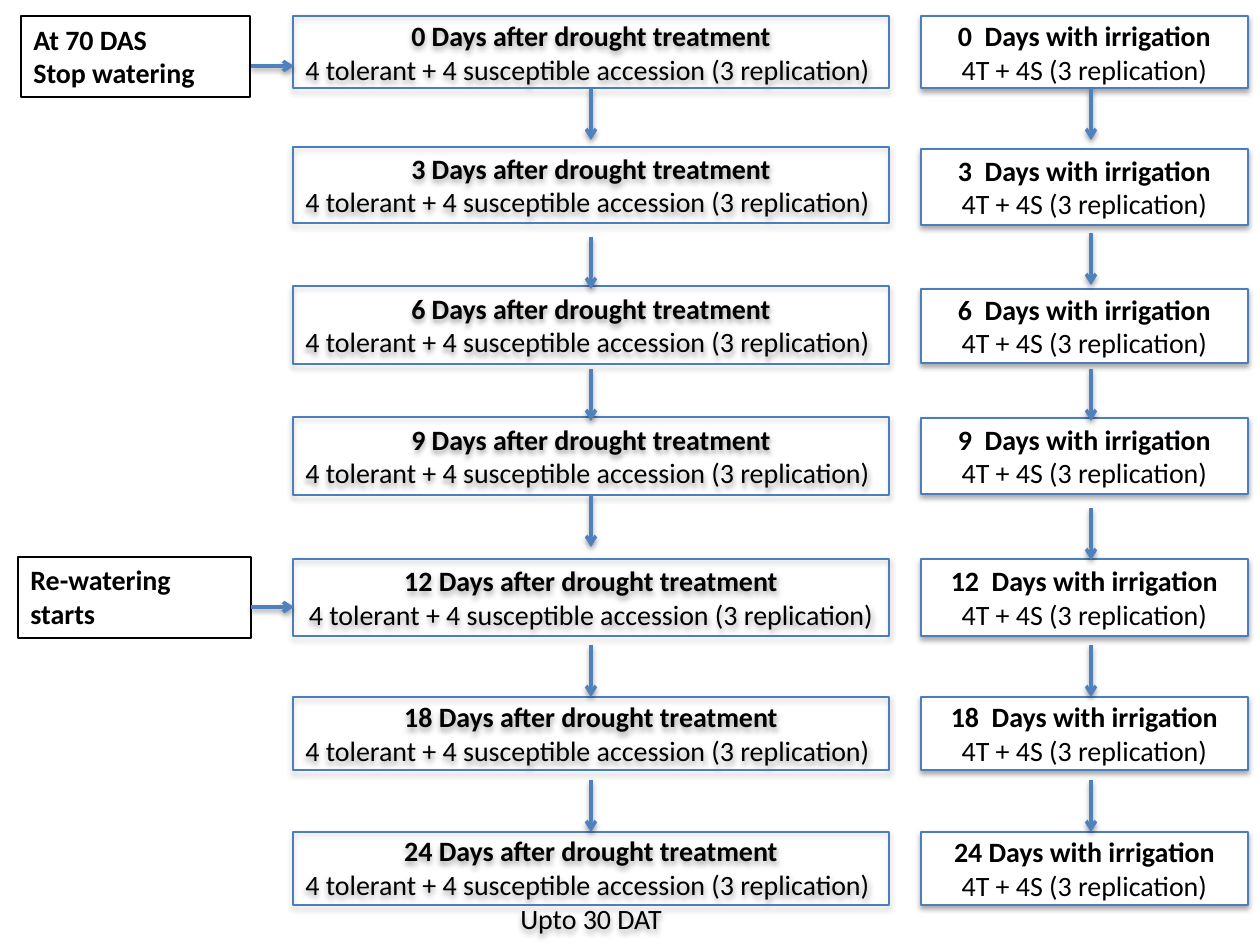
from dataclasses import dataclass

from lxml.etree import SubElement
from pptx import Presentation
from pptx.dml.color import RGBColor
from pptx.enum.shapes import MSO_CONNECTOR, MSO_SHAPE
from pptx.enum.text import MSO_ANCHOR as Anchor, MSO_AUTO_SIZE as AutoSize, PP_ALIGN as Align
from pptx.oxml.ns import qn
from pptx.util import Pt

EMU_PER_PX = 914400 / 126


@dataclass(frozen=True)
class Theme:
    font: str = "Calibri"
    size: int = 16
    ink: str = "000000"
    paper: str = "FFFFFF"
    border: str = "4B7EBC"
    arrow: str = "4F81BD"
    border_width: float = 0.75
    arrow_width: float = 2


def px(length):
    return round(length * EMU_PER_PX)


def rgb(code):
    return RGBColor.from_string(code)


def set_shadow(element, alpha, distance):
    """Drop a soft shadow straight down, in place of the theme's effect."""
    effects = SubElement(element.spPr, qn("a:effectLst"))
    shadow = SubElement(effects, qn("a:outerShdw"), blurRad="40000",
                        dist=str(distance), dir="5400000", rotWithShape="0")
    color = SubElement(shadow, qn("a:srgbClr"), val="000000")
    SubElement(color, qn("a:alpha"), val=str(alpha * 1000))


def write(paragraph, text, *, theme, bold=False, align=Align.LEFT):
    paragraph.alignment = align
    run = paragraph.add_run()
    run.text = text
    font = run.font
    font.name, font.size, font.bold = theme.font, Pt(theme.size), bold
    font.color.rgb = rgb(theme.ink)


class FlowSlide:
    def __init__(self, slide, theme):
        self.slide = slide
        self.theme = theme

    def box(self, left, top, width, height, lines, *, border, fill=None,
            shadow=False, anchor=Anchor.MIDDLE, inset=0, auto_size=AutoSize.NONE):
        """Draw a bordered box; each line is (text, bold, alignment)."""
        box = self.slide.shapes.add_shape(
            MSO_SHAPE.RECTANGLE, px(left), px(top), px(width), px(height))
        if fill:
            box.fill.solid()
            box.fill.fore_color.rgb = rgb(fill)
        else:
            box.fill.background()
        box.line.color.rgb = rgb(border)
        box.line.width = Pt(self.theme.border_width)
        if shadow:
            set_shadow(box.element, 35, 23000)
        else:
            box.shadow.inherit = False

        frame = box.text_frame
        frame.word_wrap = True
        frame.auto_size = auto_size
        frame.vertical_anchor = anchor
        frame.margin_top = frame.margin_bottom = px(inset)
        for index, (text, bold, align) in enumerate(lines):
            paragraph = frame.add_paragraph() if index else frame.paragraphs[0]
            write(paragraph, text, theme=self.theme, bold=bold, align=align)

    def note(self, left, top, width, height, *lines):
        self.box(left, top, width, height,
                 [(line, True, Align.LEFT) for line in lines],
                 border=self.theme.ink, anchor=Anchor.TOP, inset=6,
                 auto_size=AutoSize.SHAPE_TO_FIT_TEXT)

    def stage(self, left, top, width, height, lines, **style):
        self.box(left, top, width, height, lines,
                 border=self.theme.border, shadow=True, **style)

    def arrow(self, x1, y1, x2, y2):
        arrow = self.slide.shapes.add_connector(
            MSO_CONNECTOR.STRAIGHT, px(x1), px(y1), px(x2), px(y2))
        arrow.line.color.rgb = rgb(self.theme.arrow)
        arrow.line.width = Pt(self.theme.arrow_width)
        SubElement(arrow.line._get_or_add_ln(), qn("a:tailEnd"), type="arrow")
        set_shadow(arrow.element, 38, 20000)


# day: (top, height) of the drought box, then of the irrigation box
STAGES = {
    0: ((16, 72), (16, 72)),
    3: ((147, 76), (149, 76)),
    6: ((286, 78), (289, 74)),
    9: ((417, 78), (418, 76)),
    12: ((559, 77), (559, 77)),
    18: ((697, 73), (697, 73)),
    24: ((832, 73), (832, 73)),
}
DROUGHT_LEFT, DROUGHT_WIDTH, DROUGHT_ARROW_X = 293, 596, 591
IRRIGATION_LEFT, IRRIGATION_WIDTH, IRRIGATION_ARROW_X = 921, 327, 1091
ARROW_LENGTH = 52
ARROW_TOPS = {
    DROUGHT_ARROW_X: (88, 237, 369, 495, 645, 780),
    IRRIGATION_ARROW_X: (88, 233, 369, 508, 645, 780),
}


def main():
    deck = Presentation()
    deck.slide_width, deck.slide_height = px(1260), px(945)
    theme = Theme()
    flow = FlowSlide(deck.slides.add_slide(deck.slide_layouts[6]), theme)

    last_day = max(STAGES)
    for day, (drought, irrigation) in STAGES.items():
        drought_lines = [
            (f"{day} Days after drought treatment", True, Align.CENTER),
            ("4 tolerant + 4 susceptible accession (3 replication)", False,
             Align.CENTER if day == 12 else Align.JUSTIFY),
        ]
        style = {}
        if day == last_day:
            # The closing line hangs below the box, so the text starts at its top.
            drought_lines.append(("Upto 30 DAT", False, Align.CENTER))
            style = {"anchor": Anchor.TOP, "inset": 2}
        flow.stage(DROUGHT_LEFT, drought[0], DROUGHT_WIDTH, drought[1],
                   drought_lines, **style)

        gap = " " if day == last_day else "  "
        flow.stage(IRRIGATION_LEFT, irrigation[0], IRRIGATION_WIDTH, irrigation[1], [
            (f"{day}{gap}Days with irrigation", True, Align.CENTER),
            ("4T + 4S (3 replication)", False, Align.CENTER),
        ], fill=theme.paper)

    for x, tops in ARROW_TOPS.items():
        for top in tops:
            flow.arrow(x, top, x, top + ARROW_LENGTH)

    flow.note(21, 16, 229, 81, "At 70 DAS", "Stop watering")
    flow.note(18, 557, 233, 81, "Re-watering starts")
    for y in (66, 607):
        flow.arrow(251, y, 294, y)

    deck.save("out.pptx")


if __name__ == "__main__":
    main()
